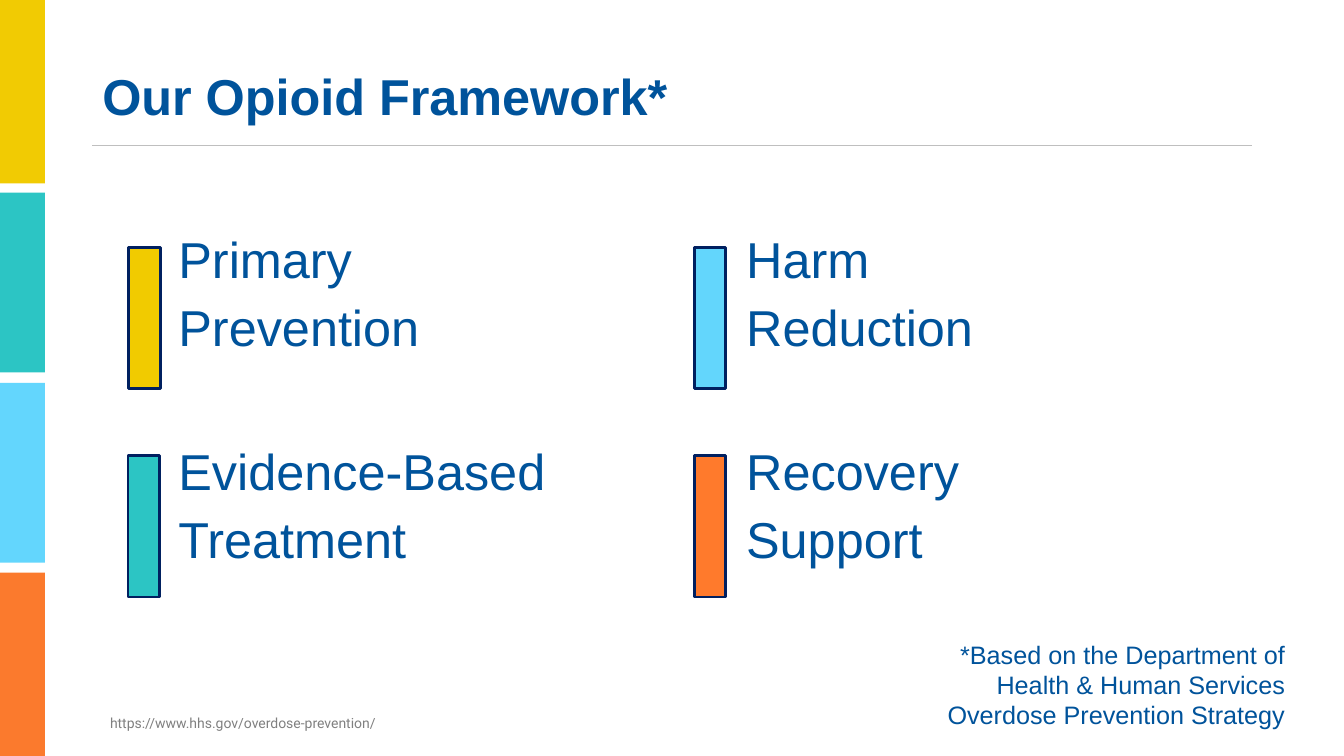
import pptx
import pptx.util
import pptx.dml.color
import pptx.enum.shapes
import pptx.enum.text
import lxml.etree

Pt = pptx.util.Pt
align = pptx.enum.text.PP_ALIGN
anchor = pptx.enum.text.MSO_ANCHOR
rect = pptx.enum.shapes.MSO_SHAPE.RECTANGLE
blue = "00539B"


def tint(text):
    return pptx.dml.color.RGBColor.from_string(text)


def write(box, lines, color, font, frame={}, para={}):
    body = box.text_frame
    for key, val in {"word_wrap": True, **frame}.items():
        setattr(body, key, val)
    for num, line in enumerate(lines):
        part = body.add_paragraph() if num else body.paragraphs[0]
        part.text = line
        for key, val in para.items():
            if num or key != "space_before":
                setattr(part, key, val)
        for key, val in font.items():
            setattr(part.font, key, val)
        part.font.color.rgb = tint(color)


deck = pptx.Presentation()
deck.slide_width, deck.slide_height = Pt(960), Pt(540)
slide = deck.slides.add_slide(deck.slide_layouts[6])
shapes = slide.shapes

bars = [
    (0, 0, 32, 131, "F1CB03", None),
    (0, 137.5, 32, 128.5, "2CC5C4", None),
    (0, 273.5, 32, 128.5, "63D6FD", None),
    (0, 409, 32, 131, "FB7A2D", None),
    (92, 176.5, 22.5, 101, "F1CB00", "002060"),
    (496, 176.5, 22.5, 101, "63D6FC", "002060"),
    (91.5, 325.5, 22.5, 101, "2CC5C4", "002060"),
    (496, 325.5, 22.5, 101, "FF7A2C", "002060"),
]
for left, top, wide, high, fill, edge in bars:
    bar = shapes.add_shape(rect, Pt(left), Pt(top), Pt(wide), Pt(high))
    bar.shadow.inherit = False
    bar.fill.solid()
    bar.fill.fore_color.rgb = tint(fill)
    if edge:
        bar.line.color.rgb = tint(edge)
        bar.line.width = Pt(2)
    else:
        bar.line.fill.background()

rule = shapes.add_connector(
    pptx.enum.shapes.MSO_CONNECTOR.STRAIGHT, Pt(66), Pt(104.25), Pt(894), Pt(104.25))
rule.line.color.rgb = tint("BFBFBF")
rule.line.width = Pt(0.75)
lxml.etree.SubElement(
    rule._element.spPr, "{http://schemas.openxmlformats.org/drawingml/2006/main}effectLst")

title = shapes.add_textbox(Pt(66), Pt(19), Pt(828), Pt(104))
write(title, ["Our Opioid Framework*"], blue,
      {"name": "Arial", "size": Pt(36), "bold": True},
      {"vertical_anchor": anchor.MIDDLE}, {"line_spacing": 0.9})

goals = [
    [("Primary", "Prevention"), ("Harm", "Reduction")],
    [("Evidence-Based", "Treatment"), ("Recovery", "Support")],
]
for top, row in zip((164, 315.5), goals):
    for left, lines in zip((111.5, 517), row):
        goal = shapes.add_textbox(Pt(left), Pt(top), Pt(360), Pt(101))
        write(goal, lines, blue, {"name": "Arial", "size": Pt(36)},
              {"margin_left": Pt(16)},
              {"line_spacing": 0.9, "space_before": Pt(10)})

link = shapes.add_textbox(Pt(71.5), Pt(507), Pt(378), Pt(19.5))
write(link, ["https://www.hhs.gov/overdose-prevention/"], "808080",
      {"name": "Roboto", "size": Pt(10)})

note = shapes.add_textbox(Pt(633.5), Pt(453), Pt(291.5), Pt(72.5))
note.fill.solid()
note.fill.fore_color.rgb = tint("FFFFFF")
write(note, ["*Based on the Department of Health & Human Services Overdose Prevention Strategy"],
      blue, {"name": "Arial", "size": Pt(18)}, para={"alignment": align.RIGHT})

deck.save("out.pptx")
